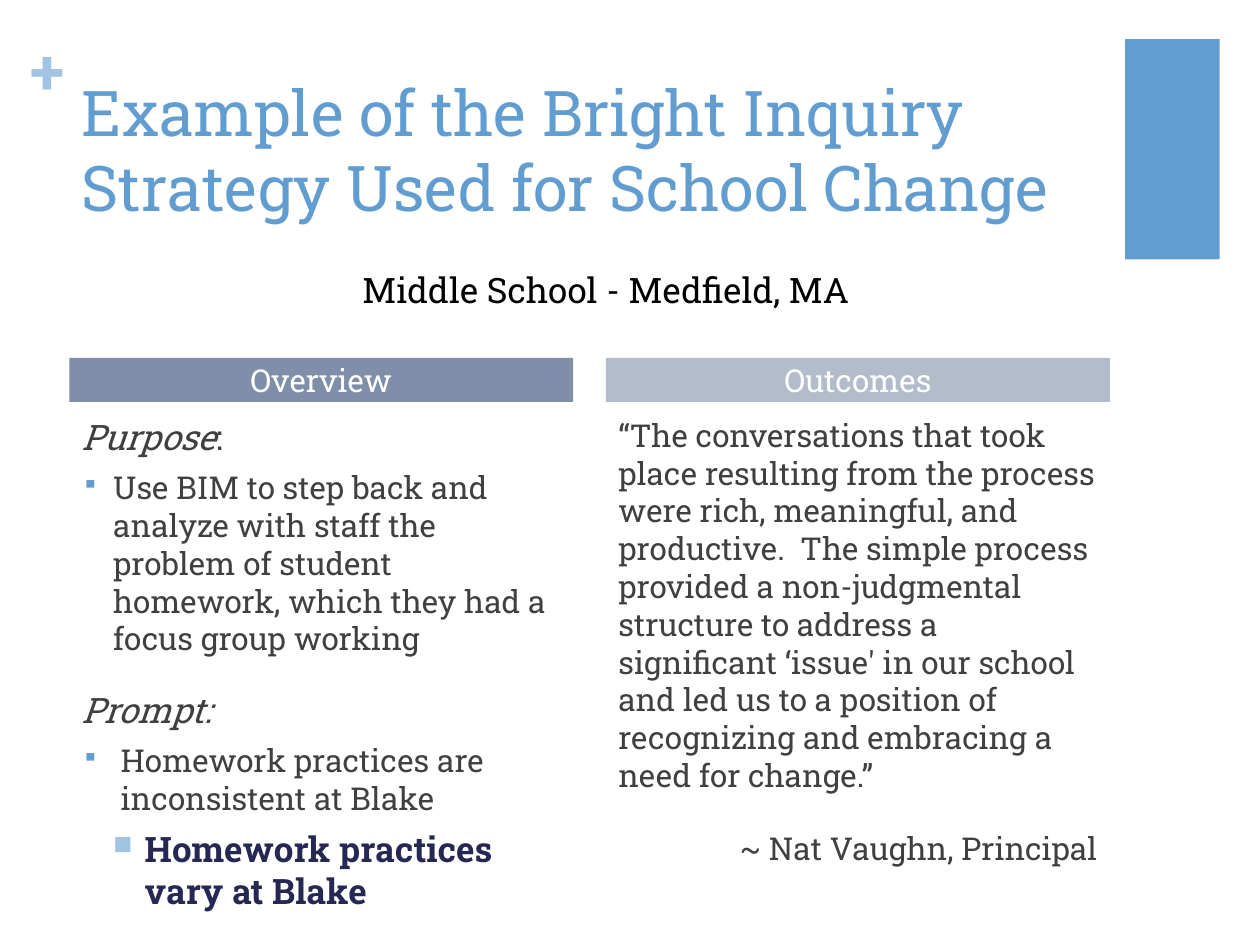
"""Build the school change example slide with an overview and its outcomes."""
from lxml import etree
from pptx import Presentation
from pptx.dml.color import RGBColor
from pptx.enum.shapes import MSO_SHAPE
from pptx.enum.text import MSO_ANCHOR, MSO_AUTO_SIZE, PP_ALIGN
from pptx.oxml.ns import qn
from pptx.util import Inches, Pt

RECTANGLE = MSO_SHAPE.RECTANGLE
TOP, MIDDLE = MSO_ANCHOR.TOP, MSO_ANCHOR.MIDDLE
LEFT, CENTER, RIGHT = PP_ALIGN.LEFT, PP_ALIGN.CENTER, PP_ALIGN.RIGHT
NO_AUTO_SIZE = MSO_AUTO_SIZE.NONE

FONT = "Roboto Slab"
BLUE = RGBColor(0x62, 0x9D, 0xD1)
LIGHT_BLUE = RGBColor(0xA1, 0xC4, 0xE3)
SLATE = RGBColor(0x7F, 0x8F, 0xA9)
LIGHT_SLATE = RGBColor(0xB2, 0xBC, 0xCB)
NAVY = RGBColor(0x24, 0x28, 0x52)
GRAY = RGBColor(0x40, 0x40, 0x40)
WHITE = RGBColor(0xFF, 0xFF, 0xFF)
BLACK = RGBColor(0x00, 0x00, 0x00)

OVERVIEW_LEFT, OUTCOMES_LEFT, COLUMN_WIDTH = 0.55, 4.81, 4


def add_run(paragraph, text, size, color, bold=False, italic=False):
    """Append one formatted run to a paragraph."""
    run = paragraph.add_run()
    run.text = text
    font = run.font
    font.name, font.size, font.bold, font.italic = FONT, Pt(size), bold, italic
    font.color.rgb = color


def format_paragraph(paragraph, alignment=LEFT, before=0, after=0):
    """Set the alignment and spacing of a paragraph."""
    paragraph.alignment = alignment
    paragraph.space_before, paragraph.space_after = Pt(before), Pt(after)


def add_bullet(paragraph, character, color, margin, hanging):
    """Give a paragraph a coloured bullet with a hanging indent."""
    properties = paragraph._p.get_or_add_pPr()
    properties.set("marL", str(Inches(margin)))
    properties.set("indent", str(-Inches(hanging)))
    bullet_color = etree.SubElement(properties, qn("a:buClr"))
    etree.SubElement(bullet_color, qn("a:srgbClr"), val=str(color))
    etree.SubElement(properties, qn("a:buSzPct"), val="75000")
    etree.SubElement(properties, qn("a:buChar"), char=character)


def add_text_box(slide, left, top, width, height):
    """Add a wrapping text box and return its text frame."""
    box = slide.shapes.add_textbox(Inches(left), Inches(top), Inches(width), Inches(height))
    box.text_frame.word_wrap = True
    return box.text_frame


def add_rectangle(slide, left, top, width, height, color):
    """Add a plain filled rectangle."""
    shape = slide.shapes.add_shape(
        RECTANGLE, Inches(left), Inches(top), Inches(width), Inches(height))
    shape.shadow.inherit = False
    shape.fill.solid()
    shape.fill.fore_color.rgb = color
    shape.line.fill.background()
    return shape


def add_decoration(slide):
    """Add the corner block and the plus sign."""
    add_rectangle(slide, 8.93, 0.31, 0.75, 1.75, BLUE)
    frame = add_text_box(slide, 0.24, 0.25, 0.29, 0.61)
    frame.word_wrap = False
    frame.margin_left = frame.margin_right = frame.margin_top = frame.margin_bottom = 0
    add_run(frame.paragraphs[0], "+", 36, LIGHT_BLUE, bold=True)


def set_title(slide, text):
    """Place and fill the title placeholder."""
    title = slide.shapes.title
    title.left, title.top = Inches(OVERVIEW_LEFT), Inches(0.53)
    title.width, title.height = Inches(8.26), Inches(1.22)
    frame = title.text_frame
    frame.word_wrap, frame.auto_size, frame.vertical_anchor = True, NO_AUTO_SIZE, TOP
    format_paragraph(frame.paragraphs[0])
    add_run(frame.paragraphs[0], text, 36, BLUE)


def add_subtitle(slide, text):
    """Add the centred school name."""
    paragraph = add_text_box(slide, 2.21, 2.08, 5.2, 0.44).paragraphs[0]
    format_paragraph(paragraph, CENTER)
    add_run(paragraph, text, 20, BLACK)


def add_column(slide, left, heading, color):
    """Add a column heading and return the text frame below it."""
    frame = add_rectangle(slide, left, 2.84, COLUMN_WIDTH, 0.35, color).text_frame
    frame.margin_top = frame.margin_bottom = 0
    frame.vertical_anchor = MIDDLE
    format_paragraph(frame.paragraphs[0], CENTER)
    add_run(frame.paragraphs[0], heading, 18, WHITE)
    return add_text_box(slide, left, 3.25, COLUMN_WIDTH, 4.02)


def fill_overview(frame):
    """Write the purpose and the prompt."""
    purpose = frame.paragraphs[0]
    format_paragraph(purpose, after=6)
    add_run(purpose, "Purpose", 20, GRAY, italic=True)
    add_run(purpose, ":", 20, GRAY)

    goal = frame.add_paragraph()
    format_paragraph(goal)
    add_bullet(goal, "▪", BLUE, 0.25, 0.25)
    add_run(goal, "Use BIM to step back and analyze with staff the problem of student "
            "homework, which they had a focus group working", 18, GRAY)

    prompt = frame.add_paragraph()
    format_paragraph(prompt, before=18)
    add_run(prompt, "Prompt:", 20, GRAY, italic=True)

    statement = frame.add_paragraph()
    format_paragraph(statement, before=6)
    add_bullet(statement, "▪", BLUE, 0.31, 0.31)
    add_run(statement, "Homework practices are inconsistent at Blake", 18, GRAY)

    revision = frame.add_paragraph()
    revision.level = 1
    format_paragraph(revision, before=6)
    add_bullet(revision, "■", LIGHT_BLUE, 0.5, 0.25)
    add_run(revision, "Homework practices vary at Blake", 20, NAVY, bold=True)


def fill_outcomes(frame):
    """Write the principal's quotation and its attribution."""
    quotation = frame.paragraphs[0]
    format_paragraph(quotation, before=20)
    add_run(quotation, "“The conversations that took place resulting from the process were "
            "rich, meaningful, and productive.  The simple process provided a "
            "non-judgmental structure to address a significant ‘issue' in our school and "
            "led us to a position of recognizing and embracing a need for change.”", 18, GRAY)
    attribution = frame.add_paragraph()
    format_paragraph(attribution, RIGHT, before=20)
    add_run(attribution, "~ Nat Vaughn, Principal", 18, GRAY)


def main():
    """Assemble and save the presentation."""
    presentation = Presentation()
    presentation.slide_width, presentation.slide_height = Inches(10), Inches(7.5)
    slide = presentation.slides.add_slide(presentation.slide_layouts[5])
    add_decoration(slide)
    set_title(slide, "Example of the Bright Inquiry Strategy Used for School Change")
    add_subtitle(slide, "Middle School - Medfield, MA")
    fill_overview(add_column(slide, OVERVIEW_LEFT, "Overview", SLATE))
    fill_outcomes(add_column(slide, OUTCOMES_LEFT, "Outcomes", LIGHT_SLATE))
    presentation.save("out.pptx")


if __name__ == "__main__":
    main()
